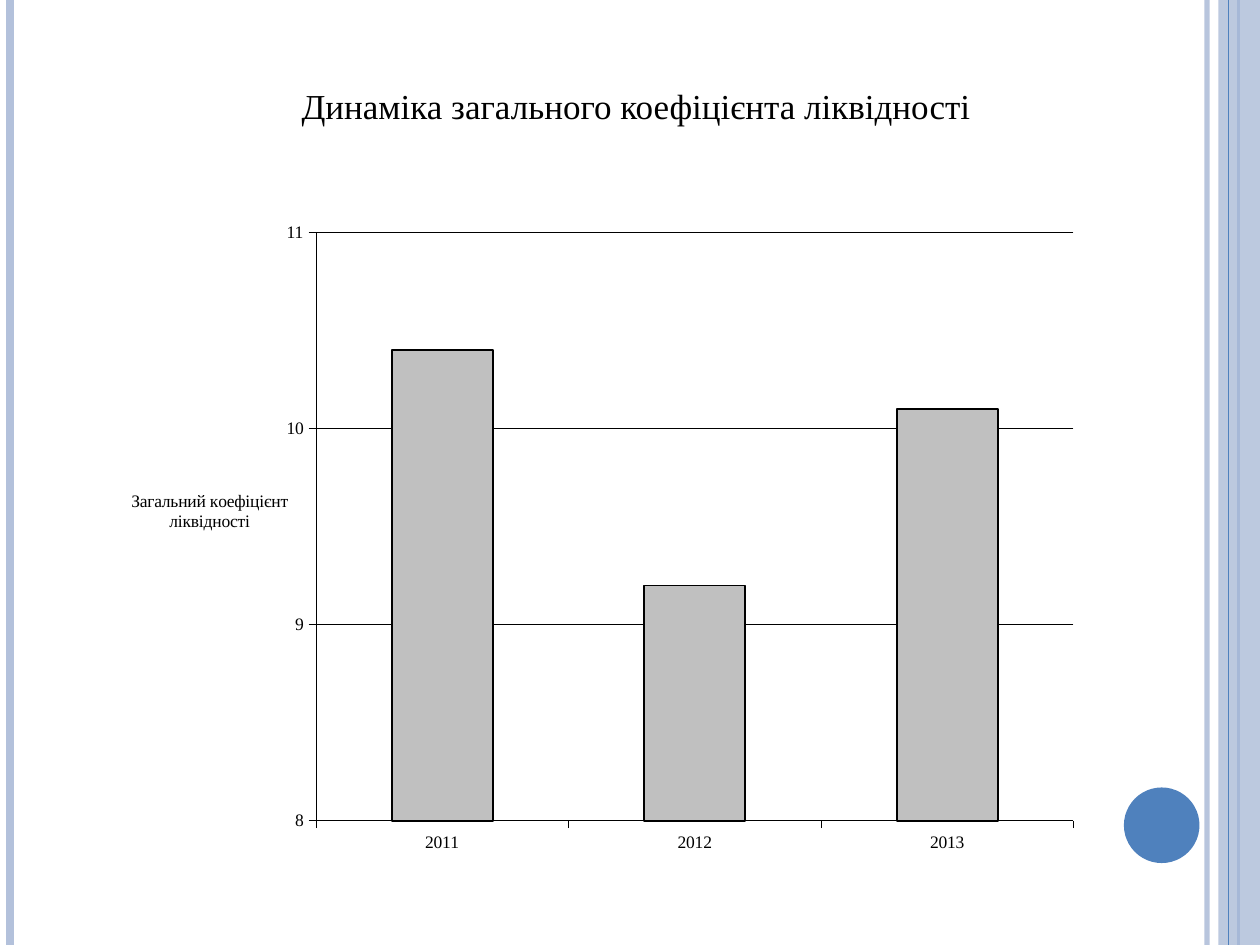
from lxml import etree
from pptx import Presentation
from pptx.chart.data import CategoryChartData
from pptx.dml.color import RGBColor
from pptx.enum.chart import XL_CHART_TYPE, XL_TICK_LABEL_POSITION, XL_TICK_MARK
from pptx.enum.shapes import MSO_CONNECTOR, MSO_SHAPE
from pptx.enum.text import MSO_ANCHOR, MSO_AUTO_SIZE, PP_ALIGN
from pptx.oxml import parse_xml
from pptx.oxml.ns import nsdecls, qn
from pptx.util import Inches, Pt

BLACK = RGBColor(0x00, 0x00, 0x00)
BLUE = RGBColor(0x4F, 0x81, 0xBD)
PALE_BLUE = RGBColor(0xB3, 0xC1, 0xDB)
GRAY = RGBColor(0xC0, 0xC0, 0xC0)
FONT = "Times New Roman"

presentation = Presentation()
presentation.slide_width = Inches(10)
presentation.slide_height = Inches(7.5)
slide = presentation.slides.add_slide(presentation.slide_layouts[6])
shapes = slide.shapes


def set_alpha(element, percent):
    color = element.find(".//" + qn("a:srgbClr"))
    etree.SubElement(color, qn("a:alpha")).set("val", str(percent * 1000))


def add_stripe(x, color, width):
    stripe = shapes.add_connector(
        MSO_CONNECTOR.STRAIGHT, Inches(x), 0, Inches(x), presentation.slide_height)
    stripe.line.color.rgb = color
    stripe.line.width = Pt(width)
    etree.SubElement(stripe._element.spPr, qn("a:effectLst"))
    return stripe


# Side stripes, band and circle
set_alpha(add_stripe(9.58, PALE_BLUE, 3)._element.spPr, 93)
add_stripe(0.08, PALE_BLUE, 4.5)
add_stripe(9.83, BLUE, 1.5)

band = shapes.add_shape(
    MSO_SHAPE.RECTANGLE, Inches(9.67), 0, Inches(0.33), presentation.slide_height)
circle_size = Inches(0.6)
add_stripe(9.75, BLUE, 0.75)
circle = shapes.add_shape(
    MSO_SHAPE.OVAL, Inches(8.92), Inches(6.25), circle_size, circle_size)
for shape, color in ((band, PALE_BLUE), (circle, BLUE)):
    shape.shadow.inherit = False
    shape.fill.solid()
    shape.fill.fore_color.rgb = color
    shape.line.fill.background()
set_alpha(band._element.spPr, 87)

# Column chart
chart_data = CategoryChartData()
chart_data.categories = ["2011", "2012", "2013"]
chart_data.add_series("Series 1", [10.4, 9.2, 10.1])
chart = shapes.add_chart(
    XL_CHART_TYPE.COLUMN_CLUSTERED, Inches(0.78), Inches(1.7),
    Inches(7.89), Inches(5.41), chart_data).chart
chart.has_legend = False
chart.has_title = False
chart.font.name = FONT
chart.font.size = Pt(10)
chart.font.color.rgb = BLACK

plot = chart.plots[0]
plot.gap_width = 150
plot.vary_by_categories = False
series = plot.series[0]
series.format.fill.solid()
series.format.fill.fore_color.rgb = GRAY
series.format.line.color.rgb = BLACK
series.format.line.width = Pt(1)

# Axes
value_axis = chart.value_axis
value_axis.minimum_scale = 8
value_axis.maximum_scale = 11
value_axis.major_unit = 1
value_axis.has_major_gridlines = True
chart.category_axis.tick_label_position = XL_TICK_LABEL_POSITION.LOW
for axis in (chart.category_axis, value_axis):
    axis.major_tick_mark = XL_TICK_MARK.OUTSIDE
    axis.minor_tick_mark = XL_TICK_MARK.NONE
    axis.tick_labels.font.name = FONT
    axis.tick_labels.font.size = Pt(10)
    axis.tick_labels.font.color.rgb = BLACK
for part in (chart.category_axis, value_axis, value_axis.major_gridlines):
    part.format.line.color.rgb = BLACK
    part.format.line.width = Pt(0.25)

# Horizontal value axis title
axis_title = value_axis.axis_title
title_frame = axis_title.text_frame
run = title_frame.paragraphs[0].add_run()
run.text = "Загальний коефіцієнт ліквідності"
run.font.name = FONT
run.font.size = Pt(10)
run.font.bold = False
run.font.color.rgb = BLACK
body = axis_title._element.find(".//" + qn("a:bodyPr"))
body.set("rot", "0")
body.set("vert", "horz")


# Fixed places of the axis title and the plot area
def set_layout(parent, after, values):
    for old in parent.findall(qn("c:layout")):
        parent.remove(old)
    items = "".join(f'<c:{tag} val="{value}"/>' for tag, value in values)
    layout = parse_xml(
        f'<c:layout {nsdecls("c")}><c:manualLayout>{items}</c:manualLayout></c:layout>')
    position = 0 if after is None else parent.index(after) + 1
    parent.insert(position, layout)


edges = [("xMode", "edge"), ("yMode", "edge")]
title_element = axis_title._element
set_layout(title_element, title_element.find(qn("c:tx")),
           edges + [("x", 0.03), ("y", 0.4)])
plot_area = chart._chartSpace.find(".//" + qn("c:plotArea"))
set_layout(plot_area, None, [("layoutTarget", "inner")] + edges + [
    ("x", 0.219), ("y", 0.027), ("w", 0.762), ("h", 0.863)])

# Slide heading
heading = shapes.add_textbox(Inches(2.27), Inches(0.62), Inches(5.56), Inches(0.44))
frame = heading.text_frame
frame.word_wrap = False
frame.auto_size = MSO_AUTO_SIZE.SHAPE_TO_FIT_TEXT
frame.vertical_anchor = MSO_ANCHOR.MIDDLE
paragraph = frame.paragraphs[0]
paragraph.alignment = PP_ALIGN.CENTER
run = paragraph.add_run()
run.text = "Динаміка загального коефіцієнта ліквідності"
run.font.name = FONT
run.font.size = Pt(20)
run.font.color.rgb = BLACK

presentation.save("out.pptx")
